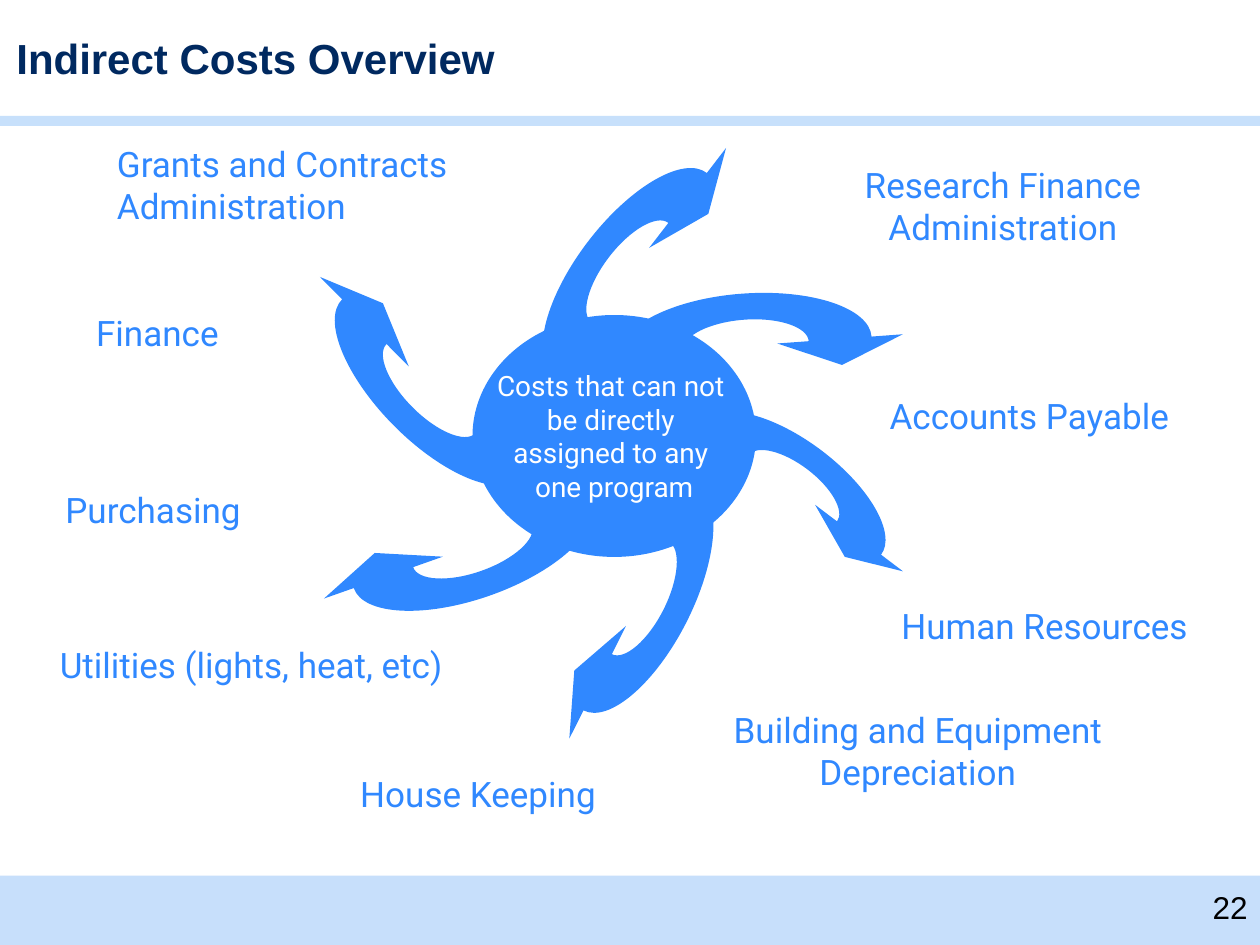
from lxml.etree import SubElement
from pptx import Presentation
from pptx.dml.color import RGBColor
from pptx.enum.shapes import MSO_SHAPE
from pptx.enum.text import MSO_ANCHOR, PP_ALIGN
from pptx.oxml.ns import qn
from pptx.util import Inches, Pt

COLORS = {
    "blue": "3088FF",
    "navy": "002960",
    "foot": "C7DFFB",
    "rule": "C7E0FB",
    "white": "FFFFFF",
    "black": "000000",
}

# Curved arrow in a box of 200 by 200 units; the head reaches past the box.
ARROW = [
    ("moveTo", [(150, 100)]),
    ("cubicBezTo", [(150, 72.5), (127.5, 50), (100, 50)]),
    ("cubicBezTo", [(72.5, 50), (50, 72.5), (50, 100)]),
    ("lnTo", [(0, 100)]),
    ("cubicBezTo", [(0, 45), (45, 0), (100, 0)]),
    ("cubicBezTo", [(155, 0), (200, 45), (200, 100)]),
    ("lnTo", [(225, 100)]),
    ("lnTo", [(175, 150)]),
    ("lnTo", [(125, 100)]),
    ("close", []),
]

ARROWS = [  # left, top, width, height, turn
    (4.92, 2.33, 2, 0.83, 355.8),
    (5.42, 3.5, 1.75, 0.75, 37.1),
    (4.08, 4.33, 2, 0.83, 116.7),
    (4, 1.75, 2, 0.83, 307.6),
    (2.75, 3.92, 2, 0.83, 160.6),
    (2.42, 2.67, 2, 0.83, 225.2),
]

LABELS = [  # text, left, top, width, height, alignment
    ("Grants and Contracts Administration", 0.83, 1.08, 3.33, 0.77, PP_ALIGN.LEFT),
    ("Utilities (lights, heat, etc)", 0.33, 5.06, 3.33, 0.43, PP_ALIGN.CENTER),
    ("Research Finance Administration", 6.25, 1.25, 3.42, 0.77, PP_ALIGN.CENTER),
    ("Accounts Payable", 6.92, 3.08, 2.5, 0.43, PP_ALIGN.CENTER),
    ("Purchasing ", 0, 3.83, 2.5, 0.43, PP_ALIGN.CENTER),
    ("Human Resources", 7, 4.75, 2.58, 0.43, PP_ALIGN.CENTER),
    ("Building and Equipment Depreciation", 5.45, 5.57, 3.67, 0.77, PP_ALIGN.CENTER),
    ("Finance", 0, 2.42, 2.5, 0.43, PP_ALIGN.CENTER),
    ("House Keeping", 2.13, 6.08, 3.33, 0.43, PP_ALIGN.CENTER),
]

CORE = "Costs that can not \nbe directly \nassigned to any \none program"


def paint(shape, color):
    shape.shadow.inherit = False
    shape.fill.solid()
    shape.fill.fore_color.rgb = RGBColor.from_string(COLORS[color])
    shape.line.fill.background()


def write(frame, text, size, font, color, align=PP_ALIGN.LEFT, bold=False):
    frame.text = text
    for para in frame.paragraphs:
        para.alignment = align
        for run in para.runs:
            run.font.size = Pt(size)
            run.font.name = font
            run.font.bold = bold
            run.font.color.rgb = RGBColor.from_string(COLORS[color])


def add_block(slide, kind, box, color):
    shape = slide.shapes.add_shape(kind, *map(Inches, box))
    paint(shape, color)
    return shape


def add_text(slide, box, text, *style, **more):
    frame = slide.shapes.add_textbox(*map(Inches, box)).text_frame
    frame.word_wrap = True
    write(frame, text, *style, **more)
    return frame


def add_title(slide, text):
    frame = add_text(slide, (0.13, 0.26, 8.55, 0.4), text, 24, "Arial", "navy", bold=True)
    frame.vertical_anchor = MSO_ANCHOR.MIDDLE
    frame.margin_left = frame.margin_right = 0
    frame.margin_top = frame.margin_bottom = 0


def add_arrow(slide, left, top, width, height, turn):
    """Make a freeform of the given box, then give it the curved outline."""
    x, y, w, h = map(Inches, (left, top, width, height))
    pen = slide.shapes.build_freeform(x, y)
    pen.add_line_segments([(x + w, y), (x + w, y + h), (x, y + h)])
    shape = pen.convert_to_shape()
    curve = next(shape.element.iter(qn("a:path")))
    for step in list(curve):
        curve.remove(step)
    curve.set("w", "2000")
    curve.set("h", "2000")
    for verb, points in ARROW:
        step = SubElement(curve, qn(f"a:{verb}"))
        for px, py in points:
            SubElement(step, qn("a:pt"), x=str(int(px * 10)), y=str(int(py * 10)))
    shape.rotation = turn
    paint(shape, "blue")


def add_core(slide):
    shape = add_block(slide, MSO_SHAPE.OVAL, (3.75, 2.5, 2.25, 1.92), "blue")
    frame = shape.text_frame
    frame.word_wrap = False
    frame.vertical_anchor = MSO_ANCHOR.MIDDLE
    write(frame, CORE, 16, "Roboto", "white", PP_ALIGN.CENTER)


def main():
    deck = Presentation()
    deck.slide_width, deck.slide_height = Inches(10), Inches(7.5)
    slide = deck.slides.add_slide(deck.slide_layouts[6])
    add_block(slide, MSO_SHAPE.RECTANGLE, (0, 6.95, 10, 0.56), "foot")
    add_block(slide, MSO_SHAPE.RECTANGLE, (0, 0.92, 10.01, 0.08), "rule")
    add_title(slide, "Indirect Costs Overview")
    add_text(slide, (0, 7, 10, 0.4), "22", 18, "Arial", "black", PP_ALIGN.RIGHT)
    add_core(slide)
    for arrow in ARROWS:
        add_arrow(slide, *arrow)
    for text, *box, align in LABELS:
        add_text(slide, box, text, 20, "Roboto", "blue", align)
    deck.save("out.pptx")


if __name__ == "__main__":
    main()
